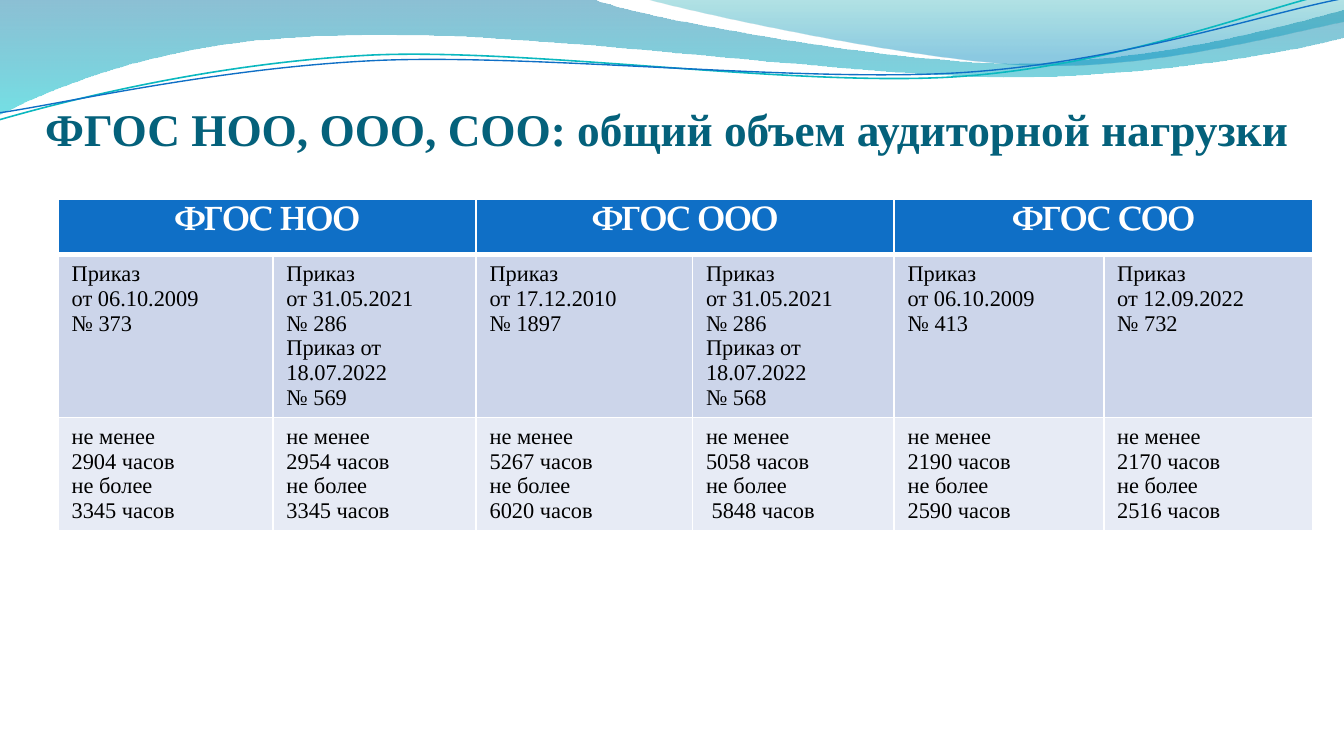
from lxml import etree
from pptx import Presentation
from pptx import util as u
from pptx.dml.color import RGBColor
from pptx.enum import text
from pptx.oxml import ns


def tint(code):
    return RGBColor.from_string(code)


def wave(start, steps, close):
    """Outline in cm: a pair is a straight step, six numbers a Bezier curve."""
    spots = [(step[i] * 1000, step[i + 1] * 1000)
             for step in steps for i in range(0, len(step), 2)]
    pen = slide.shapes.build_freeform(start[0] * 1000, start[1] * 1000,
                                      scale=u.Cm(0.001))
    pen.add_line_segments(spots, close=close)
    shape = pen.convert_to_shape()
    shape.shadow.inherit = False
    # Turn each run of three straight steps into one curve
    legs = iter(list(shape._element.iter(ns.qn("a:lnTo"))))
    for step in steps:
        leg = next(legs)
        if len(step) == 6:
            bend = etree.Element(ns.qn("a:cubicBezTo"))
            leg.addprevious(bend)
            for part in (leg, next(legs), next(legs)):
                bend.append(part[0])
                part.getparent().remove(part)
    return shape


deck = Presentation()
deck.slide_width, deck.slide_height = u.Cm(25.4), u.Cm(14.28)
slide = deck.slides.add_slide(deck.slide_layouts[5])

# Translucent waves along the top
bands = [
    ((0, 0), [(11.18, -0.03), (12.09, 0.33, 16.87, 1.19, 19.25, 1.19),
              (21.67, 1.19, 24.33, 0.48, 25.4, 0.18), (25.43, 0.69),
              (24.97, 0.84, 22.1, 1.45, 18.95, 1.45),
              (15.8, 1.42, 9.7, 0.53, 6.53, 0.66),
              (3.28, 0.69, 1.17, 1.57, -0.03, 2.16)],
     [(0, "0074A1", 45), (1, "00C6CF", 55)]),
    ((12.17, -0.03), [(12.93, 0.2, 17.32, 1.17, 19.53, 1.24),
                      (21.74, 1.32, 24.41, 0.61, 25.4, 0.41), (25.4, 0)],
     [(0, "00A1A9", 30), (0.8, "008BBF", 45)]),
]
for start, steps, stops in bands:
    band = wave(start, steps, True)
    band.line.fill.background()
    band.fill.gradient()
    band.fill.gradient_angle = 270
    for stop, (place, code, _) in zip(band.fill.gradient_stops, stops):
        stop.position = place
        stop.color.rgb = tint(code)
    hues = band._element.spPr.iter(ns.qn("a:srgbClr"))
    for hue, (_, _, alpha) in zip(hues, stops):
        etree.SubElement(hue, ns.qn("a:alpha"), val=str(alpha * 1000))

# Thin curves
curves = [
    ((0, 2.26), [(1.22, 1.91, 4.01, 1.19, 7.04, 1.04),
                 (10.06, 0.91, 15.04, 1.65, 18.08, 1.45),
                 (21.16, 1.24, 23.85, 0.15, 25.35, -0.18)], "0AB8BF", 0.85),
    ((0, 2.13), [(1.19, 1.96, 4.17, 1.27, 7.19, 1.14),
                 (10.24, 1.02, 15.16, 1.57, 18.21, 1.37),
                 (21.23, 1.17, 23.9, 0.25, 25.4, -0.03)], "0F6FC6", 0.75),
]
for start, steps, code, width in curves:
    curve = wave(start, steps, False)
    curve.fill.background()
    curve.line.color.rgb = tint(code)
    curve.line.width = u.Pt(width)

# Title
title = slide.shapes.title
title.left, title.top = u.Cm(0.6), u.Cm(1.59)
title.width, title.height = u.Cm(24), u.Cm(1.35)
frame = title.text_frame
frame.auto_size = text.MSO_AUTO_SIZE.NONE
frame.word_wrap = True
frame.vertical_anchor = text.MSO_ANCHOR.BOTTOM
frame.margin_left = frame.margin_right = frame.margin_bottom = 0
para = frame.paragraphs[0]
para.alignment = text.PP_ALIGN.CENTER
run = para.add_run()
run.text = "ФГОС НОО, ООО, СОО: общий объем аудиторной нагрузки"
run.font.name, run.font.size, run.font.bold = "Times New Roman", u.Pt(24.3), True
run.font.color.rgb = tint("04617B")

# Table contents: one list of lines per cell
heads = ["ФГОС НОО", "ФГОС ООО", "ФГОС СОО"]
orders = [
    ["от 06.10.2009", "№ 373"],
    ["от 31.05.2021", "№ 286", "Приказ от 18.07.2022", "№ 569"],
    ["от 17.12.2010", "№ 1897"],
    ["от 31.05.2021", "№ 286", "Приказ от 18.07.2022", "№ 568"],
    ["от 06.10.2009", "№ 413"],
    ["от 12.09.2022", "№ 732"],
]
hours = [("2904", "3345"), ("2954", "3345"), ("5267", "6020"),
         ("5058", " 5848"), ("2190", "2590"), ("2170", "2516")]
rows = [
    [cell for head in heads for cell in ([head], [])],
    [["Приказ"] + order for order in orders],
    [["не менее", f"{low} часов", "не более", f"{high} часов"]
     for low, high in hours],
]

# Table grid
widths = [4.06, 3.84, 4.09, 3.81, 3.96, 3.96]
heights = [1.04, 3.07, 2.13]
table = slide.shapes.add_table(3, 6, u.Cm(1.1), u.Cm(3.77),
                               u.Cm(sum(widths)), u.Cm(sum(heights))).table
for col, width in zip(table.columns, widths):
    col.width = u.Cm(width)
for row, height in zip(table.rows, heights):
    row.height = u.Cm(height)
for c in range(0, 6, 2):
    table.cell(0, c).merge(table.cell(0, c + 1))

# Cell text, fills and white borders
fills = ["0F6FC6", "CCD5EA", "E7EBF5"]
for r, row in enumerate(rows):
    top = r == 0
    for c, lines in enumerate(row):
        cell = table.cell(r, c)
        cell.fill.solid()
        cell.fill.fore_color.rgb = tint(fills[r])
        for i, line in enumerate(lines):
            frame = cell.text_frame
            para = frame.add_paragraph() if i else frame.paragraphs[0]
            para.alignment = text.PP_ALIGN.CENTER if top else text.PP_ALIGN.LEFT
            run = para.add_run()
            run.text = line
            run.font.name = "TeX Gyre Pagella" if top else "Times New Roman"
            run.font.size = u.Pt(18 if top else 12)
            run.font.bold = top
            run.font.color.rgb = tint("FFFFFF" if top else "000000")
        props = cell._tc.get_or_add_tcPr()
        sides = {"L": 1, "R": 1, "T": 3 if r == 1 else 1, "B": 3 if top else 1}
        for i, (side, width) in enumerate(sides.items()):
            edge = etree.Element(ns.qn(f"a:ln{side}"), w=str(u.Pt(width)))
            paint = etree.SubElement(edge, ns.qn("a:solidFill"))
            etree.SubElement(paint, ns.qn("a:srgbClr"), val="FFFFFF")
            props.insert(i, edge)

deck.save("out.pptx")
